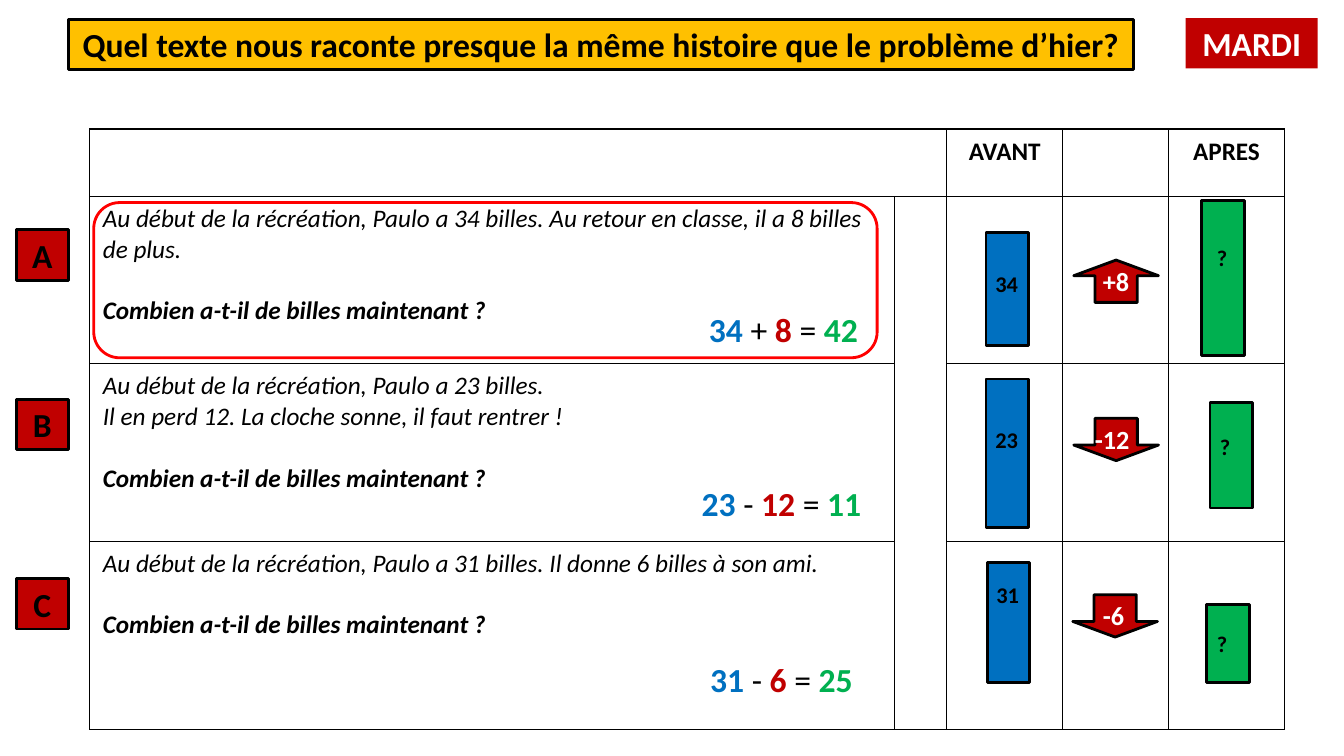
from dataclasses import dataclass

from lxml import etree
from pptx import Presentation
from pptx.dml.color import RGBColor
from pptx.enum.shapes import MSO_SHAPE
from pptx.enum.text import MSO_ANCHOR, MSO_AUTO_SIZE, PP_ALIGN
from pptx.oxml.ns import qn
from pptx.util import Inches, Pt


@dataclass(frozen=True)
class Theme:
    font: str = "Calibri"
    black: str = "000000"
    white: str = "FFFFFF"
    gold: str = "FFC000"
    crimson: str = "C00000"
    blue: str = "0070C0"
    green: str = "00B050"
    highlight: str = "FF0000"
    heading: float = 24
    change: float = 18.7
    body: float = 18
    bar: float = 16
    line: float = 2
    border: float = 1


@dataclass(frozen=True)
class Problem:
    """Places are (left, top, width, height); labels are (text, left, top, width)."""
    letter: str
    letter_top: float
    story: tuple
    before: tuple
    before_label: tuple
    arrow: tuple
    change_label: tuple
    after: tuple
    after_label: tuple
    sum_place: tuple
    operation: tuple


QUESTION = "Combien a-t-il de billes maintenant ?"
PROBLEMS = [
    Problem("A", 2.28,
            ("Au début de la récréation, Paulo a 34 billes. Au retour en classe, il a 8 billes de plus.",),
            (9.78, 2.31, 0.42, 1.12), ("34", 9.67, 2.63, 0.63),
            (10.65, 2.58, 0.84, 0.42), ("+8", 10.84, 2.58, 0.54),
            (11.92, 1.99, 0.42, 1.54), ("?", 11.97, 2.37, 0.52),
            (6.88, 3.02, 1.78, 0.5), ("34", " + ", "8", " = ", "42")),
    Problem("B", 3.96,
            ("Au début de la récréation, Paulo a 23 billes.",
             "Il en perd 12. La cloche sonne, il faut rentrer !"),
            (9.78, 3.76, 0.42, 1.47), ("23", 9.67, 4.18, 0.63),
            (10.65, 4.15, 0.84, 0.42), ("-12", 10.76, 4.15, 0.63),
            (12, 3.99, 0.42, 1.05), ("?", 12, 4.25, 0.52),
            (6.76, 4.74, 1.98, 0.5), ("23", " - ", "12", " = ", "11")),
    Problem("C", 5.74,
            ("Au début de la récréation, Paulo a 31 billes. Il donne 6 billes à son ami.",),
            (9.79, 5.58, 0.42, 1.19), ("31", 9.68, 5.72, 0.63),
            (10.64, 5.9, 0.84, 0.42), ("-6", 10.84, 5.9, 0.54),
            (11.97, 6, 0.42, 0.77), ("?", 11.97, 6.2, 0.52),
            (6.86, 6.49, 1.78, 0.5), ("31", " - ", "6", " = ", "25")),
]


class SlideBuilder:
    def __init__(self, page, theme):
        self.page = page
        self.theme = theme

    def add_span(self, para, text, size, color, bold=True, italic=False):
        span = para.add_run()
        span.text = text
        font = span.font
        font.name, font.size = self.theme.font, Pt(size)
        font.bold, font.italic = bold, italic
        font.color.rgb = RGBColor.from_string(color)

    def fill_text(self, box, spans, size, align=PP_ALIGN.CENTER):
        """Fill a box with one paragraph of (text, color, bold) spans."""
        frame = box.text_frame
        frame.word_wrap = True
        frame.auto_size = MSO_AUTO_SIZE.NONE
        frame.vertical_anchor = MSO_ANCHOR.TOP
        para = frame.paragraphs[0]
        para.alignment = align
        for text, color, bold in spans:
            self.add_span(para, text, size, color, bold)

    def paint(self, box, fill, line):
        if fill:
            box.fill.solid()
            box.fill.fore_color.rgb = RGBColor.from_string(fill)
        else:
            box.fill.background()
        if line:
            box.line.color.rgb = RGBColor.from_string(line)
            box.line.width = Pt(self.theme.line)
        else:
            box.line.fill.background()

    def title(self, text, place):
        box = self.page.shapes.title
        box.left, box.top, box.width, box.height = map(Inches, place)
        self.paint(box, self.theme.gold, self.theme.black)
        self.fill_text(box, [(text, self.theme.black, True)], self.theme.heading)
        box.text_frame.word_wrap = False

    def shape(self, kind, place, fill, line, parent=None):
        box = (parent or self.page).shapes.add_shape(kind, *map(Inches, place))
        box.shadow.inherit = False
        self.paint(box, fill, line)
        return box

    def tag(self, text, place, color, line=None):
        box = self.shape(MSO_SHAPE.RECTANGLE, place, self.theme.crimson, line)
        self.fill_text(box, [(text, color, True)], self.theme.heading)

    def text(self, place, spans, size, align=PP_ALIGN.CENTER, parent=None):
        box = (parent or self.page).shapes.add_textbox(*map(Inches, place))
        self.fill_text(box, spans, size, align)

    def bar(self, place, label, fill, align):
        text, *label_place = label
        group = self.page.shapes.add_group_shape()
        self.shape(MSO_SHAPE.RECTANGLE, place, fill, self.theme.black, group)
        self.text((*label_place, 0.37), [(text, self.theme.black, True)],
                  self.theme.bar, align, group)

    def change_arrow(self, place, label):
        text, *label_place = label
        group = self.page.shapes.add_group_shape()
        arrow = self.shape(MSO_SHAPE.UP_ARROW, place, self.theme.crimson, self.theme.black, group)
        arrow.adjustments[0], arrow.adjustments[1] = 0.5, 0.37
        arrow.rotation = 180 if text.startswith("-") else 0
        self.text((*label_place, 0.42), [(text, self.theme.white, True)],
                  self.theme.change, PP_ALIGN.LEFT, group)

    def operation(self, place, parts):
        theme = self.theme
        colors = (theme.blue, theme.black, theme.crimson, theme.black, theme.green)
        spans = [(part, color, color != theme.black) for part, color in zip(parts, colors)]
        self.text(place, spans, theme.heading)

    def style_cell(self, cell):
        cell.margin_left = cell.margin_right = Inches(0.13)
        cell.margin_top = cell.margin_bottom = Inches(0.07)
        properties = cell._tc.get_or_add_tcPr()
        for side in ("a:lnL", "a:lnR", "a:lnT", "a:lnB"):
            edge = etree.SubElement(properties, qn(side), w=str(Pt(self.theme.border)))
            solid = etree.SubElement(edge, qn("a:solidFill"))
            etree.SubElement(solid, qn("a:srgbClr"), val=self.theme.black)
        cell.fill.solid()
        cell.fill.fore_color.rgb = RGBColor.from_string(self.theme.white)

    def problem_table(self, place, widths, heights, headers, problems):
        theme = self.theme
        frame = self.page.shapes.add_table(len(heights), len(widths), *map(Inches, place))
        table = frame.table
        table.first_row = table.horz_banding = False
        for column, width in zip(table.columns, widths):
            column.width = Inches(width)
        for row, height in zip(table.rows, heights):
            row.height = Inches(height)
        table.cell(0, 0).merge(table.cell(0, 1))
        table.cell(1, 1).merge(table.cell(len(problems), 1))
        for cell in table.iter_cells():
            if not cell.is_spanned:
                self.style_cell(cell)
        for column, header in headers.items():
            para = table.cell(0, column).text_frame.paragraphs[0]
            para.alignment = PP_ALIGN.CENTER
            self.add_span(para, header, theme.body, theme.black)
        for row, problem in enumerate(problems, 1):
            body = table.cell(row, 0).text_frame
            for index, sentence in enumerate(problem.story):
                para = body.add_paragraph() if index else body.paragraphs[0]
                self.add_span(para, sentence, theme.body, theme.black, False, True)
            para = body.add_paragraph()
            para.space_before = Pt(22)
            self.add_span(para, QUESTION, theme.body, theme.black, True, True)


def main():
    deck = Presentation()
    deck.slide_width, deck.slide_height = Inches(13.33), Inches(7.5)
    theme = Theme()
    slide = SlideBuilder(deck.slides.add_slide(deck.slide_layouts[5]), theme)
    slide.title("Quel texte nous raconte presque la même histoire que le problème d’hier?",
                (0.68, 0.19, 10.56, 0.5))
    slide.tag("MARDI", (11.76, 0.18, 1.31, 0.5), theme.white)
    slide.problem_table((0.89, 1.28, 11.86, 5.96), (7.98, 0.52, 1.15, 1.05, 1.15),
                        (0.67, 1.66, 1.76, 1.87), {2: "AVANT", 4: "APRES"}, PROBLEMS)
    for problem in PROBLEMS:
        slide.tag(problem.letter, (0.16, problem.letter_top, 0.52, 0.5), theme.black, theme.black)
        slide.bar(problem.before, problem.before_label, theme.blue, PP_ALIGN.CENTER)
        slide.change_arrow(problem.arrow, problem.change_label)
        slide.bar(problem.after, problem.after_label, theme.green, PP_ALIGN.LEFT)
        slide.operation(problem.sum_place, problem.operation)
    slide.shape(MSO_SHAPE.ROUNDED_RECTANGLE, (0.93, 2.01, 7.77, 1.54), None, theme.highlight)
    deck.save("out.pptx")


if __name__ == "__main__":
    main()
